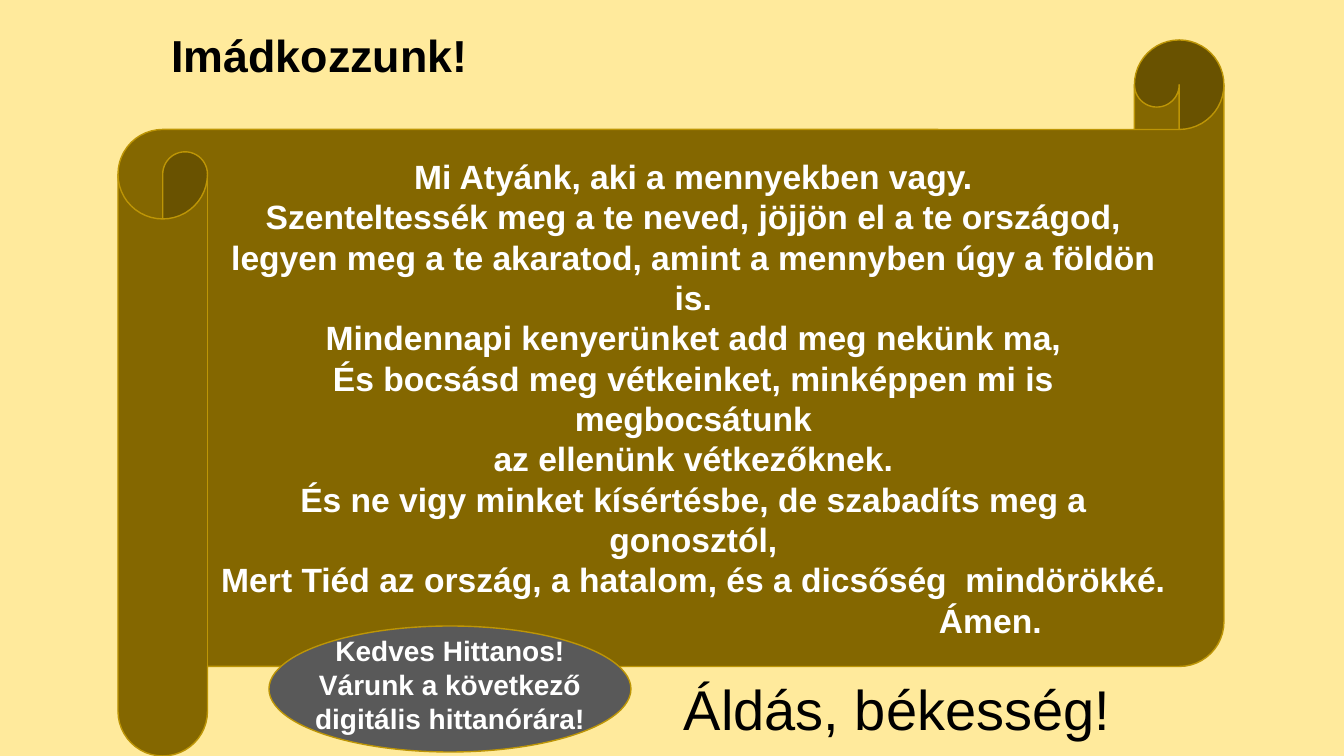
from pptx import Presentation
from pptx.dml.color import RGBColor
from pptx.enum.shapes import MSO_SHAPE
from pptx.enum.text import MSO_ANCHOR, PP_ALIGN
from pptx.util import Pt

TOP, MIDDLE, CENTER = MSO_ANCHOR.TOP, MSO_ANCHOR.MIDDLE, PP_ALIGN.CENTER
CREAM = RGBColor(0xFF, 0xEA, 0x9C)
BROWN = RGBColor(0x84, 0x67, 0x00)
GOLD = RGBColor(0xBD, 0x95, 0x06)
GRAY = RGBColor(0x59, 0x59, 0x59)
WHITE = RGBColor(0xFF, 0xFF, 0xFF)
BLACK = RGBColor(0x00, 0x00, 0x00)

TITLE = ["Imádkozzunk!"]
PRAYER = [
    "Mi Atyánk, aki a mennyekben vagy.",
    "Szenteltessék meg a te neved, jöjjön el a te országod,",
    "legyen meg a te akaratod, amint a mennyben úgy a földön is.",
    "Mindennapi kenyerünket add meg nekünk ma,",
    "És bocsásd meg vétkeinket, minképpen mi is megbocsátunk",
    "az ellenünk vétkezőknek.",
    "És ne vigy minket kísértésbe, de szabadíts meg a gonosztól,",
    "Mert Tiéd az ország, a hatalom, és a dicsőség  mindörökké.",
    "Ámen.",
]
INVITATION = ["Kedves Hittanos!", "Várunk a következő digitális hittanórára!"]
FAREWELL = ["Áldás, békesség!"]

# left, top, width, height in px
SLIDE_SIZE = (1344, 756)
TITLE_BOX = (121, 28, 397, 54)
SCROLL_BOX = (118, 40, 1106, 716)
OVAL_BOX = (269, 626, 362, 126)
INVITATION_BOX = (269, 629, 362, 112)
FAREWELL_BOX = (561, 670, 672, 78)
AMEN_INDENT = 594
EMU_PER_PX = 914400 / 100.8


def emu(*lengths):
    return [round(length * EMU_PER_PX) for length in lengths]


def write(holder, lines, anchor, **font_format):
    frame = holder.text_frame
    frame.word_wrap = True
    frame.vertical_anchor = anchor
    frame.text = "\n".join(lines)
    for paragraph in frame.paragraphs:
        paragraph.alignment = CENTER
        for run in paragraph.runs:
            run.font.name = "Arial"
            run.font.color.rgb = font_format["color"]
            for key in ("size", "bold"):
                setattr(run.font, key, font_format[key])
    return frame


def add_panel(slide, preset, box, fill):
    panel = slide.shapes.add_shape(preset, *emu(*box))
    panel.shadow.inherit = False
    panel.fill.solid()
    panel.fill.fore_color.rgb = fill
    panel.line.color.rgb = GOLD
    panel.line.width = Pt(1)
    return panel


def main():
    prs = Presentation()
    prs.slide_width, prs.slide_height = emu(*SLIDE_SIZE)
    slide = prs.slides.add_slide(prs.slide_layouts[5])
    slide.background.fill.solid()
    slide.background.fill.fore_color.rgb = CREAM

    title = slide.shapes.title
    title.left, title.top, title.width, title.height = emu(*TITLE_BOX)
    write(title, TITLE, MIDDLE, size=Pt(32), bold=True, color=BLACK)

    scroll = add_panel(slide, MSO_SHAPE.HORIZONTAL_SCROLL, SCROLL_BOX, BROWN)
    prayer = write(scroll, PRAYER, MIDDLE, size=Pt(24), bold=True, color=WHITE)
    amen = prayer.paragraphs[-1]
    amen.font.size = Pt(24)
    amen._p.get_or_add_pPr().set("marL", str(emu(AMEN_INDENT)[0]))

    add_panel(slide, MSO_SHAPE.OVAL, OVAL_BOX, GRAY)
    for lines, box, size, bold, color in (
        (INVITATION, INVITATION_BOX, 20, True, WHITE),
        (FAREWELL, FAREWELL_BOX, 40, False, BLACK),
    ):
        caption = slide.shapes.add_textbox(*emu(*box))
        write(caption, lines, TOP, size=Pt(size), bold=bold, color=color)

    prs.save("out.pptx")


if __name__ == "__main__":
    main()
